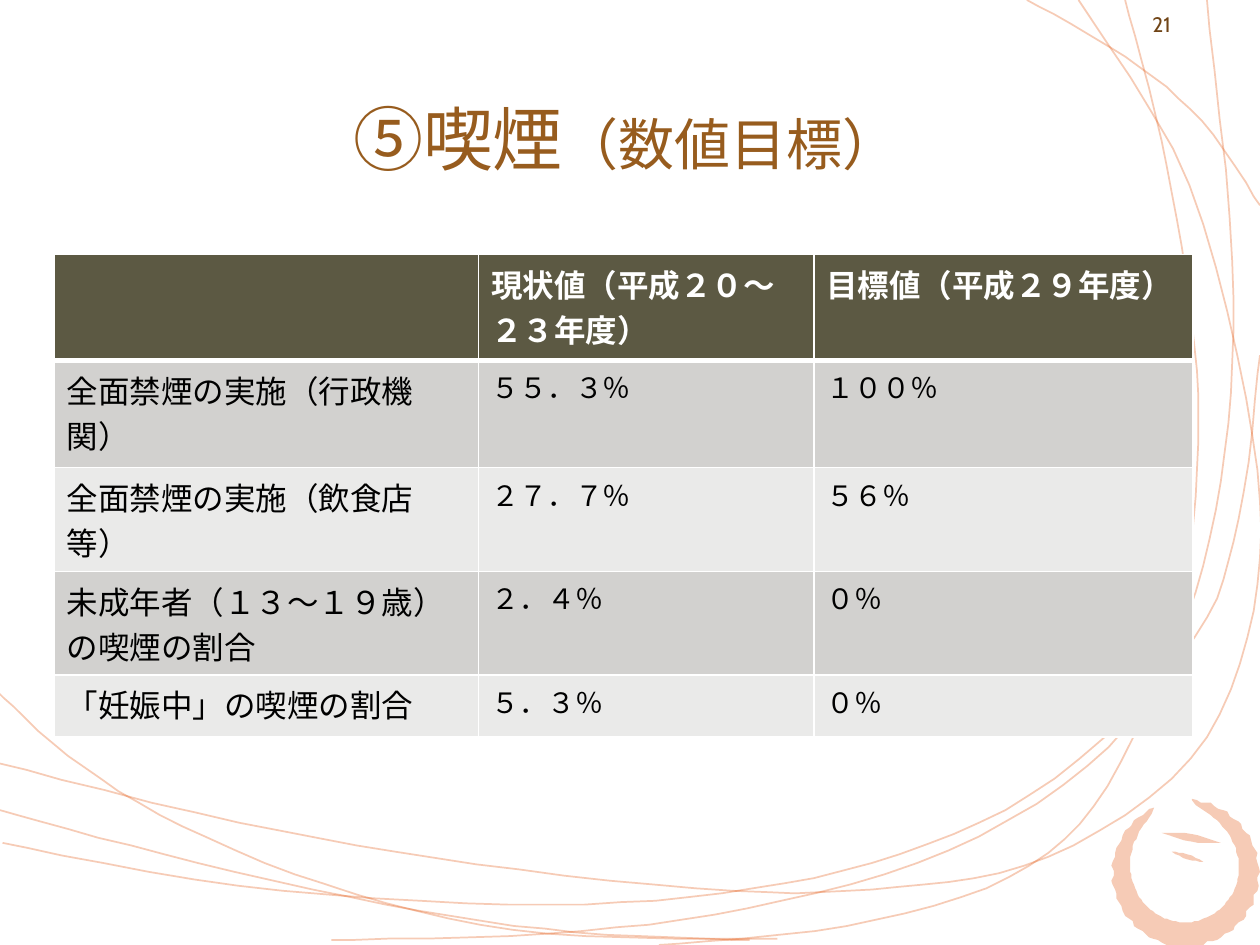
"""Build the smoking targets slide: a table over smooth pale strands and a brushed ring."""
import math

import pptx
import pptx.dml.color
import pptx.enum.lang
import pptx.enum.text
import pptx.oxml
import pptx.oxml.ns
import pptx.util

COLUMNS, ROWS = 1000, 750
SWIRL, HEADER, WHITE = "E3560E", "5C5943", "FFFFFF"
BANDS = ("EAEAE9", "D2D1CF")
CENTER = pptx.enum.text.PP_ALIGN.CENTER
MIDDLE = pptx.enum.text.MSO_ANCHOR.MIDDLE
NAMESPACE = pptx.oxml.ns.nsdecls("a")


def paint(target, color):
    """Give a fill or a font a solid colour."""
    if hasattr(target, "solid"):
        target.solid()
    color_format = target.fore_color if hasattr(target, "solid") else target.color
    color_format.rgb = pptx.dml.color.RGBColor.from_string(color)


def smooth(anchors, steps=6):
    """Return points of a Catmull-Rom curve that passes through the anchors."""
    padded = [anchors[0], *anchors, anchors[-1]]
    points = []
    for before, start, end, after in zip(padded, padded[1:], padded[2:], padded[3:]):
        for step in range(steps):
            t = step / steps
            points.append(tuple(
                b + ((c - a) * t + (2 * a - 5 * b + 4 * c - d) * t**2
                     + (3 * b - a - 3 * c + d) * t**3) / 2
                for a, b, c, d in zip(before, start, end, after)))
    return points + [anchors[-1]]


presentation = pptx.Presentation()
presentation.slide_width = pptx.util.Inches(10)
presentation.slide_height = pptx.util.Inches(7.5)
UNIT = presentation.slide_width // COLUMNS
slide = presentation.slides.add_slide(presentation.slide_layouts[5])

strands = {
    "left dip": [(-3, 548), (54, 600), (145, 656), (283, 710), (434, 741), (617, 745)],
    "left rise": [(0, 643), (130, 678), (306, 718), (456, 740), (595, 746)],
    "corner arc": [(815, 0), (893, 45), (954, 96), (1000, 163)],
    "inner sweep": [(523, 750), (672, 735), (801, 696), (879, 624), (935, 483),
                    (951, 352), (944, 237), (922, 112), (893, 0)],
    "wide sweep": [(0, 606), (190, 653), (378, 686), (582, 707), (712, 704), (832, 680),
                   (945, 602), (995, 485), (994, 346), (944, 147), (856, 0)],
    "edge sweep": [(2, 669), (189, 703), (403, 718), (573, 709), (714, 678), (837, 618),
                   (948, 506), (983, 412), (1000, 282)],
    "outer sweep": [(263, 746), (435, 741), (593, 721), (753, 675), (880, 593),
                    (942, 490), (972, 359), (978, 207), (958, 0)],
}

RING_X, RING_Y, RING_RADIUS = 941, 693, 58
RING_START, RING_SWEEP, RING_STEPS = -116, -329, 90
outer_edge, inner_edge = [], []
for step in range(RING_STEPS + 1):
    share = step / RING_STEPS
    angle = math.radians(RING_START + RING_SWEEP * share)
    bristle = math.sin(step * 1.7)
    outer_radius = RING_RADIUS + bristle
    thickness = 19 * math.sqrt(abs(math.sin(math.pi * share))) + bristle
    for edge, radius in ((outer_edge, outer_radius), (inner_edge, outer_radius - thickness)):
        edge.append((RING_X + radius * math.cos(angle), RING_Y + radius * math.sin(angle)))
brush_marks = [outer_edge + inner_edge[::-1]]

for start_x, start_y, length, drop, belly in ((922, 661, 47, 8, 3), (930, 676, 25, 8, 2)):
    along = [step / 8 for step in range(9)]
    sides = [[(start_x + length * t, start_y + drop * t + sign * belly * math.sin(math.pi * t))
              for t in along] for sign in (-1, 1)]
    brush_marks.append(sides[0] + sides[1][::-1])

outlines = [(smooth(anchors), False) for anchors in strands.values()]
outlines += [(points, True) for points in brush_marks]
for points, filled in outlines:
    builder = slide.shapes.build_freeform(*points[0], scale=UNIT)
    builder.add_line_segments(points[1:], close=filled)
    shape = builder.convert_to_shape()
    shape.shadow.inherit = False
    if filled:
        paint(shape.fill, SWIRL)
        shape.line.fill.background()
    else:
        shape.fill.background()
        shape.line.width = pptx.util.Pt(1)
        paint(shape.line.fill, SWIRL)
    for color_element in shape._element.spPr.iter(pptx.oxml.ns.qn("a:srgbClr")):
        color_element.append(pptx.oxml.parse_xml(f'<a:alpha {NAMESPACE} val="30000"/>'))

styled_runs = []

title = slide.shapes.title
title.left, title.top, title.width, title.height = (UNIT * n for n in (47, 47, 900, 125))
title.text_frame.vertical_anchor = MIDDLE
paragraph = title.text_frame.paragraphs[0]
paragraph.alignment = CENTER
for text, size in (("⑤喫煙", 40), ("（数値目標）", 32)):
    run = paragraph.add_run()
    run.text = text
    styled_runs.append((run, size, "Calibri", "975C1E", False))

targets = [
    ("", "現状値（平成２０～２３年度）", "目標値（平成２９年度）"),
    ("全面禁煙の実施（行政機関）", "５５．３％", "１００％"),
    ("全面禁煙の実施（飲食店等）", "２７．７％", "５６％"),
    ("未成年者（１３～１９歳）の喫煙の割合", "２．４％", "０％"),
    ("「妊娠中」の喫煙の割合", "５．３％", "０％"),
]
column_widths = (337, 266, 301)
row_heights = (84, 85, 75, 75, 49)
table = slide.shapes.add_table(
    len(targets), len(column_widths), UNIT * 43, UNIT * 202,
    UNIT * sum(column_widths), UNIT * sum(row_heights)).table
for column, width in zip(table.columns, column_widths):
    column.width = UNIT * width
for row_index, (texts, height) in enumerate(zip(targets, row_heights)):
    table.rows[row_index].height = UNIT * height
    is_header = row_index == 0
    for column_index, text in enumerate(texts):
        cell = table.cell(row_index, column_index)
        cell.text_frame.text = text
        for run in cell.text_frame.paragraphs[0].runs:
            if is_header:
                styled_runs.append((run, 18, "Calibri", WHITE, True))
            else:
                size = 16 if column_index else 18
                styled_runs.append((run, size, "Arial", "000000", False))
        properties = cell._tc.get_or_add_tcPr()
        for side in "LRTB":
            under_header = (row_index, side) in ((0, "B"), (1, "T"))
            border_width = pptx.util.Pt(3 if under_header else 1)
            properties.append(pptx.oxml.parse_xml(
                f'<a:ln{side} {NAMESPACE} w="{border_width}"><a:solidFill>'
                f'<a:srgbClr val="{WHITE}"/></a:solidFill></a:ln{side}>'))
        paint(cell.fill, HEADER if is_header else BANDS[row_index % 2])

number_box = slide.shapes.add_textbox(UNIT * 844, 0, UNIT * 156, UNIT * 39)
number_box.text_frame.word_wrap = True
number_box.text_frame.vertical_anchor = MIDDLE
paragraph = number_box.text_frame.paragraphs[0]
paragraph.text = "21"
paragraph.alignment = CENTER
styled_runs.append((paragraph.runs[0], 12, "Cabin", "704416", False))

for run, size, font_name, color, bold in styled_runs:
    run.font.size = pptx.util.Pt(size)
    run.font.name = font_name
    run.font.bold = bold
    run.font.language_id = pptx.enum.lang.MSO_LANGUAGE_ID.JAPANESE
    paint(run.font, color)

presentation.save("out.pptx")
